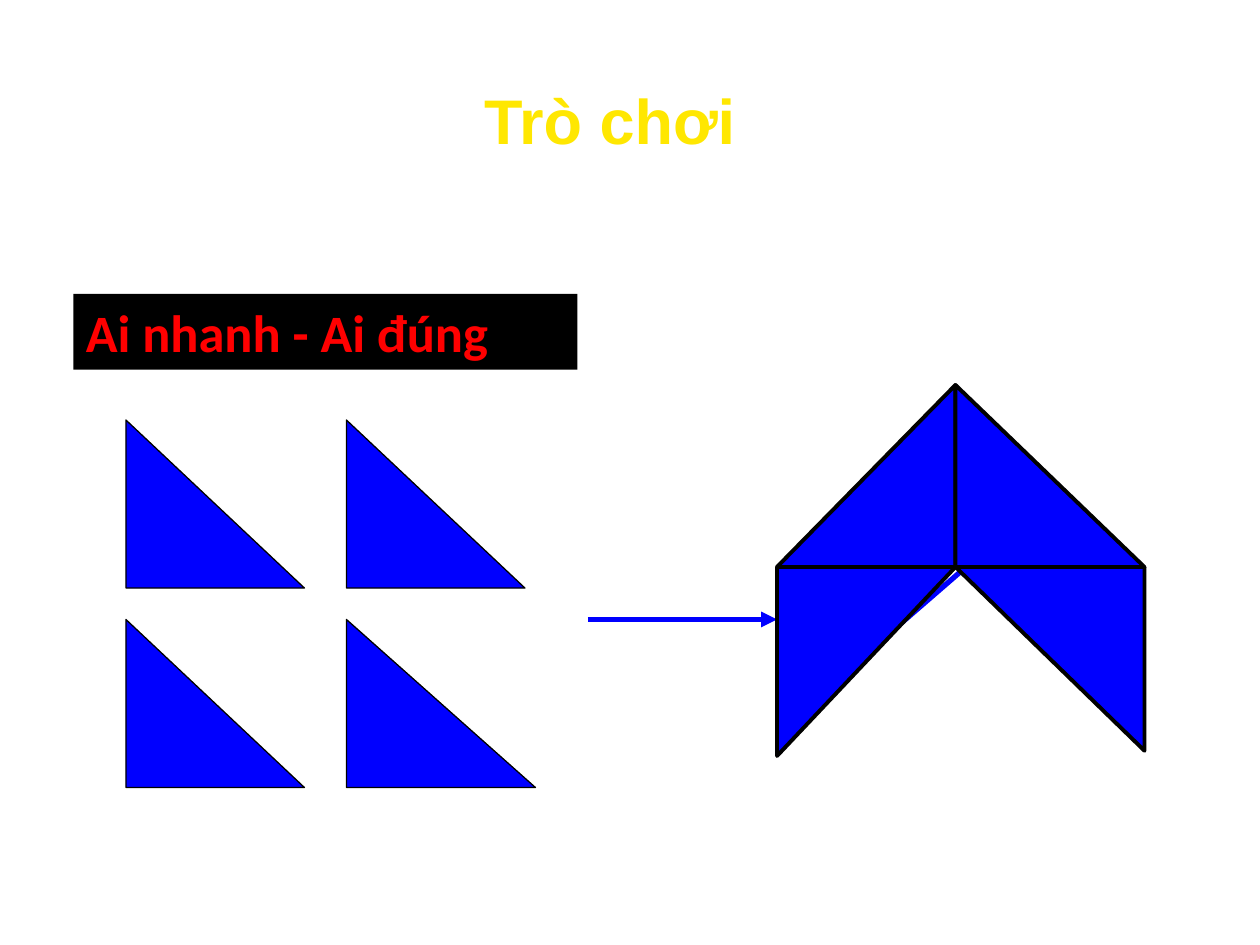
from itertools import pairwise

from lxml.etree import SubElement
from pptx import Presentation
from pptx.dml.color import RGBColor
from pptx.enum.shapes import MSO_CONNECTOR as Connector, MSO_SHAPE as Shape
from pptx.enum.text import MSO_ANCHOR as Anchor, MSO_AUTO_SIZE as AutoSize, PP_ALIGN as Align
from pptx.oxml.ns import qn
from pptx.util import Pt

COLORS = {
    "black": "000000",
    "blue": "0000FF",
    "red": "FF0000",
    "yellow": "FFE701",
    "orange": "FE3E02",
}


def color(name):
    """Return the named colour."""
    return RGBColor.from_string(COLORS[name])


def write(shape, text, *, font, size, align, anchor, wrap, auto_size, top=3.6):
    """Put bold text in a shape and return its font for colouring."""
    frame = shape.text_frame
    frame.text = text
    frame.word_wrap = wrap
    frame.auto_size = auto_size
    frame.vertical_anchor = anchor
    frame.margin_top = Pt(top)
    paragraph = frame.paragraphs[0]
    paragraph.alignment = align
    run_font = paragraph.runs[0].font
    run_font.name, run_font.size, run_font.bold = font, Pt(size), True
    return run_font


def add_title(slide):
    """Place the title with its vertical yellow to orange gradient."""
    title = slide.shapes.title
    title.left, title.top, title.width, title.height = Pt(258.5), Pt(39.6), Pt(180), Pt(66.2)
    font = write(title, "Trò chơi", font="Arial", size=36, align=Align.CENTER,
                 anchor=Anchor.TOP, wrap=False, auto_size=AutoSize.NONE, top=7.2)
    font.fill.gradient()
    font.fill.gradient_angle = 270
    for stop, name in zip(font.fill.gradient_stops, ("yellow", "orange")):
        stop.color.rgb = color(name)


def add_filled(shapes, preset, left, top, width, height, fill):
    """Add a preset shape with a plain fill and no shadow."""
    shape = shapes.add_shape(preset, Pt(left), Pt(top), Pt(width), Pt(height))
    shape.shadow.inherit = False
    shape.fill.solid()
    shape.fill.fore_color.rgb = color(fill)
    return shape


def add_banner(slide):
    """Add the black banner with the name of the game."""
    banner = add_filled(slide.shapes, Shape.RECTANGLE, 42, 168, 288, 43.2, "black")
    banner.line.fill.background()
    font = write(banner, "Ai nhanh - Ai đúng", font="Calibri", size=30, align=Align.LEFT,
                 anchor=Anchor.TOP, wrap=True, auto_size=AutoSize.SHAPE_TO_FIT_TEXT)
    font.color.rgb = color("red")


def add_triangle(slide, left, top, width, height, turn=0, weight=0.75):
    """Add a right triangle that covers the given box after its turn."""
    if turn % 180:
        left, top = left + (width - height) / 2, top + (height - width) / 2
        width, height = height, width
    triangle = add_filled(slide.shapes, Shape.RIGHT_TRIANGLE, left, top, width, height, "blue")
    triangle.rotation = turn
    triangle.line.color.rgb = color("black")
    triangle.line.width = Pt(weight)


def add_line(shapes, start, end, arrow=False):
    """Add a blue line, with an arrowhead at its end if asked."""
    line = shapes.add_connector(Connector.STRAIGHT, *map(Pt, start + end))
    line.line.color.rgb = color("blue")
    line.line.width = Pt(3)
    properties = line.element.spPr
    if arrow:
        SubElement(properties.find(qn("a:ln")), qn("a:tailEnd"), type="triangle")
    SubElement(properties, qn("a:effectLst"))


def add_outline(slide):
    """Add the grouped outline of the arrow-shaped figure."""
    corners = [(462, 402), (462, 324), (552, 252), (636, 324), (636, 402), (552, 324)]
    group = slide.shapes.add_group_shape()
    for start, end in pairwise(corners + corners[:1]):
        add_line(group.shapes, start, end)


def add_figure(slide):
    """Add the four triangles that meet at the centre of the figure."""
    center_x, center_y = 546, 324
    left_width, right_width, roof = 102, 108, 104
    left_x = center_x - left_width
    add_triangle(slide, left_x, center_y, left_width, 108, 90, 2.25)
    add_triangle(slide, left_x, center_y - roof, left_width, roof, 270, 2.25)
    add_triangle(slide, center_x, center_y, right_width, 105, 180, 2.25)
    add_triangle(slide, center_x, center_y - roof, right_width, roof, 0, 2.25)


def main():
    """Build the game slide and save it."""
    deck = Presentation()
    deck.slide_width, deck.slide_height = Pt(720), Pt(540)
    slide = deck.slides.add_slide(deck.slide_layouts[5])
    add_banner(slide)
    for left, top, width in ((72, 240, 102), (198, 354, 108), (72, 354, 102), (198, 240, 102)):
        add_triangle(slide, left, top, width, 96)
    add_line(slide.shapes, (336, 354), (444, 354), arrow=True)
    add_outline(slide)
    add_title(slide)
    add_figure(slide)
    deck.save("out.pptx")


if __name__ == "__main__":
    main()
